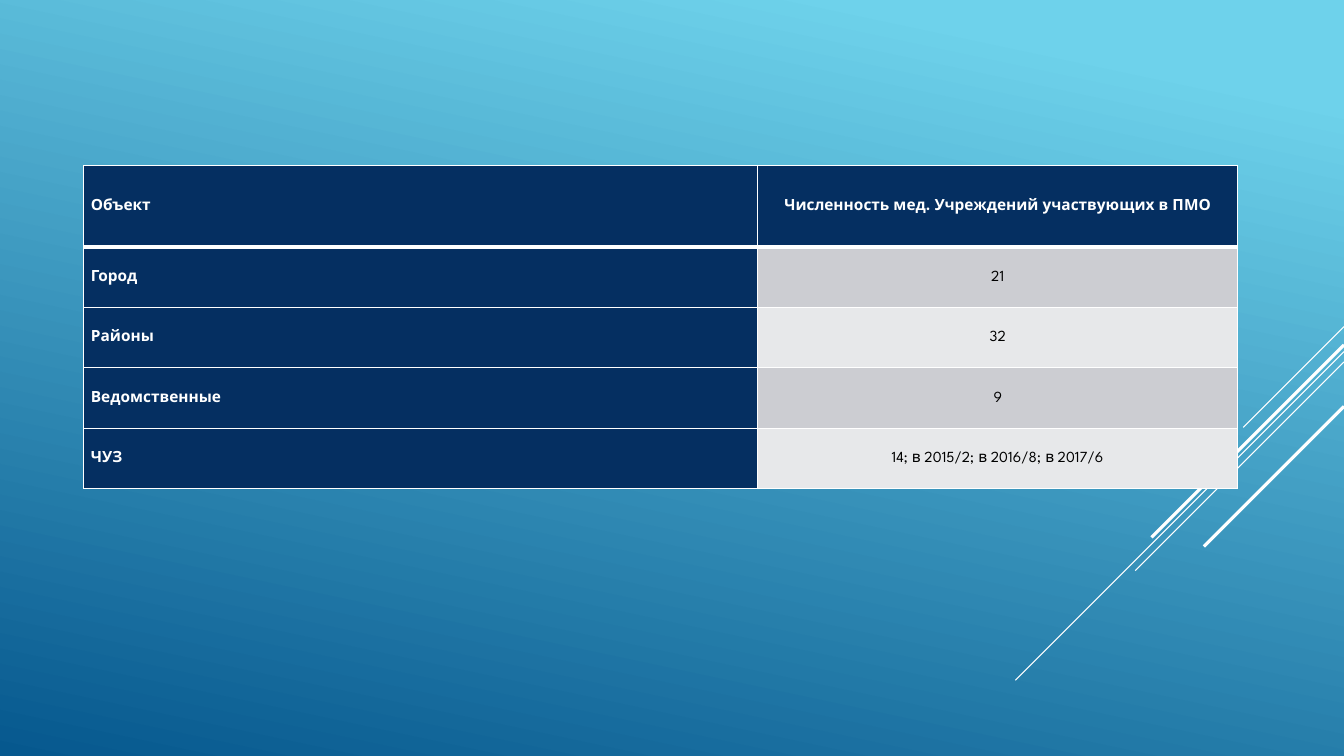
from lxml import etree
from pptx import Presentation
from pptx import util as u
from pptx.dml.color import RGBColor
from pptx.enum import shapes, text
from pptx.oxml import ns

WHITE = RGBColor(0xFF, 0xFF, 0xFF)
BLACK = RGBColor(0, 0, 0)
NAVY = RGBColor(0x05, 0x2F, 0x61)
BANDS = (RGBColor(0xCC, 0xCD, 0xD2), RGBColor(0xE7, 0xE8, 0xEA))
SKY = RGBColor(0x6E, 0xD2, 0xEB)
DEEP_BLUE = RGBColor(0x06, 0x58, 0x8E)

WIDTH, HEIGHT = 33.87, 19.05
DIAGONALS = (
    (8.23, 2.54, 0.75),
    (8.86, 8.28, 0.75),
    (9.12, 5.26, 0.75),
    (8.69, 4.85, 2.25),
    (10.24, 3.53, 2.25),
)
ROWS = (
    ("Объект", "Численность мед. Учреждений участвующих в ПМО"),
    ("Город", "21"),
    ("Районы", "32"),
    ("Ведомственные", "9"),
    ("ЧУЗ", "14; в 2015/2; в 2016/8; в 2017/6"),
)


class SlideBuilder:
    """Draws styled elements on the current slide."""

    font = "League Spartan"
    size = u.Pt(11)

    def __init__(self, slide):
        self.slide = slide

    def background(self, start, end, angle):
        fill = self.slide.background.fill
        fill.gradient()
        fill.gradient_angle = 360 - angle
        for stop, color, position in zip(fill.gradient_stops, (start, end), (0.1, 1)):
            stop.color.rgb = color
            stop.position = position

    def diagonal(self, top, run, weight):
        line = self.slide.shapes.add_connector(
            shapes.MSO_CONNECTOR.STRAIGHT,
            u.Cm(WIDTH), u.Cm(top), u.Cm(WIDTH - run), u.Cm(top + run))
        line.line.color.rgb = WHITE
        line.line.width = u.Pt(weight)
        etree.SubElement(line._element.spPr, ns.qn("a:effectLst"))

    def table(self, left, top, widths, heights, rows):
        frame = self.slide.shapes.add_table(
            len(rows), len(widths), u.Cm(left), u.Cm(top),
            u.Cm(sum(widths)), u.Cm(sum(heights)))
        table = frame.table
        for column, width in zip(table.columns, widths):
            column.width = u.Cm(width)
        for row, height in zip(table.rows, heights):
            row.height = u.Cm(height)
        for i, values in enumerate(rows):
            for j, value in enumerate(values):
                heading = i == 0 or j == 0
                cell = table.cell(i, j)
                cell.fill.solid()
                cell.fill.fore_color.rgb = NAVY if heading else BANDS[(i - 1) % 2]
                self.cell_text(cell, value, heading, centred=j == 1)
                self.cell_borders(cell, top=3 if i == 1 else 1, bottom=3 if i == 0 else 1)

    def cell_text(self, cell, value, heading, centred):
        cell.vertical_anchor = text.MSO_ANCHOR.MIDDLE
        cell.margin_left = cell.margin_right = u.Cm(0.18)
        cell.margin_top = cell.margin_bottom = 0
        paragraph = cell.text_frame.paragraphs[0]
        paragraph.line_spacing = 1.07
        paragraph.alignment = text.PP_ALIGN.CENTER if centred else text.PP_ALIGN.LEFT
        run = paragraph.add_run()
        run.text = value
        run.font.name = self.font
        run.font.size = self.size
        run.font.bold = heading
        run.font.color.rgb = WHITE if heading else BLACK

    def cell_borders(self, cell, top, bottom):
        properties = cell._tc.get_or_add_tcPr()
        sides = (("lnL", 1), ("lnR", 1), ("lnT", top), ("lnB", bottom))
        for index, (side, weight) in enumerate(sides):
            border = etree.Element(ns.qn(f"a:{side}"), w=str(u.Pt(weight)))
            fill = etree.SubElement(border, ns.qn("a:solidFill"))
            etree.SubElement(fill, ns.qn("a:srgbClr"), val=str(WHITE))
            properties.insert(index, border)


def main():
    presentation = Presentation()
    presentation.slide_width = u.Cm(WIDTH)
    presentation.slide_height = u.Cm(HEIGHT)
    builder = SlideBuilder(presentation.slides.add_slide(presentation.slide_layouts[6]))
    builder.background(SKY, DEEP_BLUE, 102)
    for diagonal in DIAGONALS:
        builder.diagonal(*diagonal)
    builder.table(2.11, 4.17, (16.99, 12.09), [2.06] + [1.52] * 4, ROWS)
    presentation.save("out.pptx")


if __name__ == "__main__":
    main()
